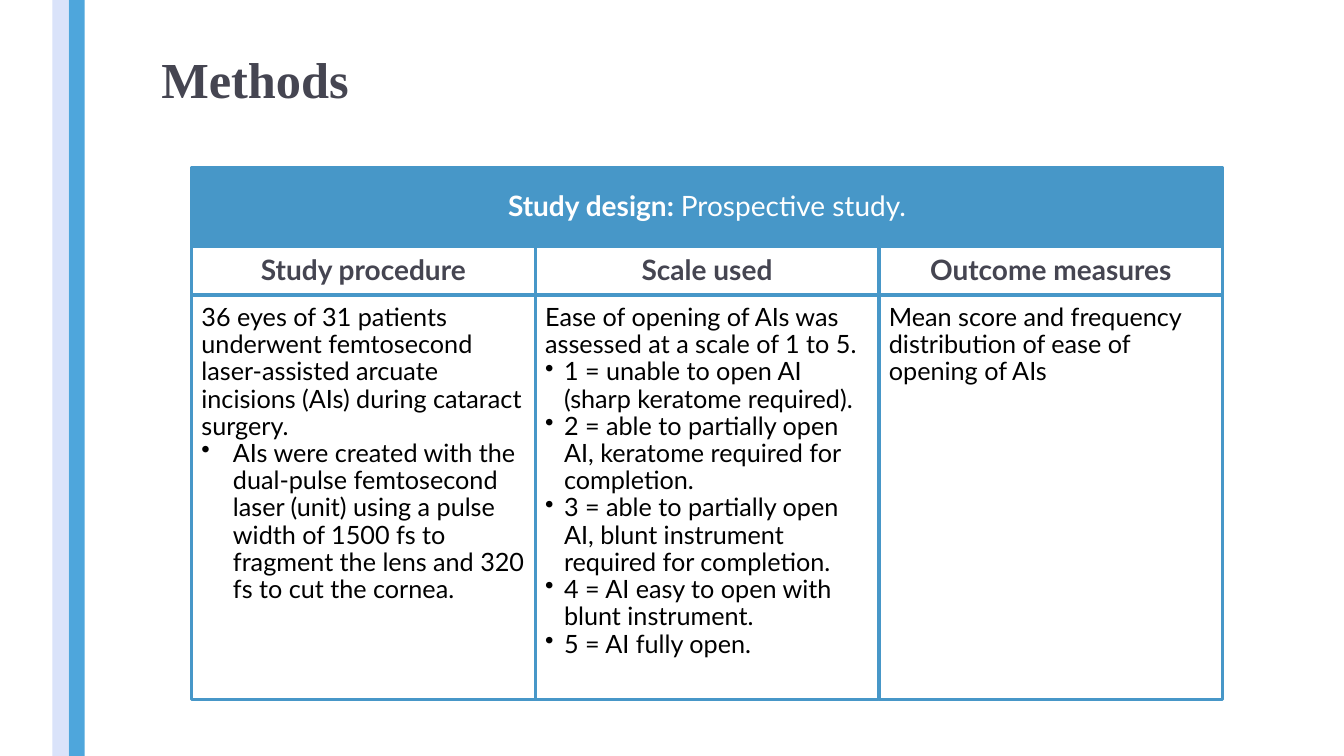
from lxml import etree
from pptx import Presentation
from pptx.dml.color import RGBColor
from pptx.enum.shapes import MSO_SHAPE
from pptx.enum.text import MSO_ANCHOR, MSO_AUTO_SIZE, PP_ALIGN
from pptx.oxml.ns import qn
from pptx.util import Pt

RECTANGLE = MSO_SHAPE.RECTANGLE
TOP, MIDDLE = MSO_ANCHOR.TOP, MSO_ANCHOR.MIDDLE
LEFT, CENTER = PP_ALIGN.LEFT, PP_ALIGN.CENTER
NO_AUTOFIT = MSO_AUTO_SIZE.NONE

COLORS = {
    "white": "FFFFFF", "black": "000000", "heading": "454551",
    "header": "4797C8", "stripe": "4EA6DC", "pale": "DAE3FA",
}
TITLE_FONT, BODY_FONT = "Times New Roman", "Lato"

TABLE_LEFT, COLUMN_WIDTH = 136.8, 245.52
BANNER_TOP, BANNER_HEIGHT = 120, 57
HEADING_TOP, HEADING_HEIGHT = 176.4, 34.4
BODY_TOP, BODY_HEIGHT = 210.4, 289.2

COLUMNS = [
    ("Study procedure",
     "36 eyes of 31 patients underwent femtosecond laser-assisted arcuate "
     "incisions (AIs) during cataract surgery.",
     22.5,
     ["AIs were created with the dual-pulse femtosecond laser (unit) using a "
      "pulse width of 1500 fs to fragment the lens and 320 fs to cut the cornea."]),
    ("Scale used",
     "Ease of opening of AIs was assessed at a scale of 1 to 5.",
     13.5,
     ["1 = unable to open AI (sharp keratome required).",
      "2 = able to partially open AI, keratome required for completion.",
      "3 = able to partially open AI, blunt instrument required for completion.",
      "4 = AI easy to open with blunt instrument.",
      "5 = AI fully open."]),
    ("Outcome measures",
     "Mean score and frequency distribution of ease of opening of AIs",
     0,
     []),
]


def rgb(name):
    return RGBColor.from_string(COLORS[name])


class SlideBuilder:
    def __init__(self, slide):
        self.slide = slide

    def format_paragraph(self, para, size, color, font=BODY_FONT, bold=None,
                         align=LEFT, spacing=0.9):
        para.alignment = align
        para.line_spacing = spacing
        para.space_before = para.space_after = Pt(0)
        para.font.size = Pt(size)
        para.font.name = font
        para.font.bold = bold
        para.font.color.rgb = rgb(color)

    def title(self, text, left, top, width, height):
        box = self.slide.shapes.title
        box.left, box.top, box.width, box.height = map(Pt, (left, top, width, height))
        frame = box.text_frame
        frame.text = text
        frame.auto_size = NO_AUTOFIT
        frame.vertical_anchor = MIDDLE
        self.format_paragraph(frame.paragraphs[0], 36, "heading", TITLE_FONT, True,
                              spacing=0.89)

    def rectangle(self, left, top, width, height, fill, line=None):
        box = self.slide.shapes.add_shape(
            RECTANGLE, Pt(left), Pt(top), Pt(width), Pt(height))
        box.shadow.inherit = False
        box.fill.solid()
        box.fill.fore_color.rgb = rgb(fill)
        if line:
            box.line.color.rgb = rgb(line)
            box.line.width = Pt(2.25)
        else:
            box.line.fill.background()
        return box

    def cell(self, left, top, width, height, fill="white", anchor=MIDDLE, inset=7.2):
        box = self.rectangle(left, top, width, height, fill, "header")
        frame = box.text_frame
        frame.word_wrap = True
        frame.vertical_anchor = anchor
        frame.margin_left = frame.margin_right = Pt(inset)
        frame.margin_top = frame.margin_bottom = Pt(inset)
        return frame

    def banner(self, label, text, left, top, width, height):
        para = self.cell(left, top, width, height, "header", inset=6).paragraphs[0]
        self.format_paragraph(para, 20, "white", align=CENTER)
        for words, bold in ((label, True), (text, False)):
            span = para.add_run()
            span.text = words
            span.font.bold = bold

    def heading(self, text, left, top, width, height):
        para = self.cell(left, top, width, height).paragraphs[0]
        para.text = text
        self.format_paragraph(para, 20, "heading", bold=True, align=CENTER)

    def body(self, intro, bullets, indent, left, top, width, height):
        frame = self.cell(left, top, width, height, anchor=TOP)
        frame.text = intro
        self.format_paragraph(frame.paragraphs[0], 18, "black")
        for text in bullets:
            para = frame.add_paragraph()
            para.text = text
            self.format_paragraph(para, 18, "black")
            self.bullet(para, indent)

    def bullet(self, para, indent):
        properties = para._p.get_or_add_pPr()
        properties.set("marL", str(Pt(indent)))
        properties.set("indent", str(-Pt(indent)))
        mark = etree.Element(qn("a:buChar"), char="•")
        properties.find(qn("a:defRPr")).addprevious(mark)


def main():
    deck = Presentation()
    deck.slide_width, deck.slide_height = Pt(960), Pt(540)
    page = SlideBuilder(deck.slides.add_slide(deck.slide_layouts[5]))

    page.rectangle(49, 0, 11.5, 540, "stripe")
    page.rectangle(37.5, 0, 11.5, 540, "pale")
    page.title("Methods", 108, 30.2, 795, 57)

    page.banner("Study design: ", "Prospective study.", TABLE_LEFT, BANNER_TOP,
                COLUMN_WIDTH * len(COLUMNS), BANNER_HEIGHT)
    for index, (heading, intro, indent, bullets) in enumerate(COLUMNS):
        left = TABLE_LEFT + index * COLUMN_WIDTH
        page.body(intro, bullets, indent, left, BODY_TOP, COLUMN_WIDTH, BODY_HEIGHT)
        page.heading(heading, left, HEADING_TOP, COLUMN_WIDTH, HEADING_HEIGHT)

    deck.save("out.pptx")


if __name__ == "__main__":
    main()
